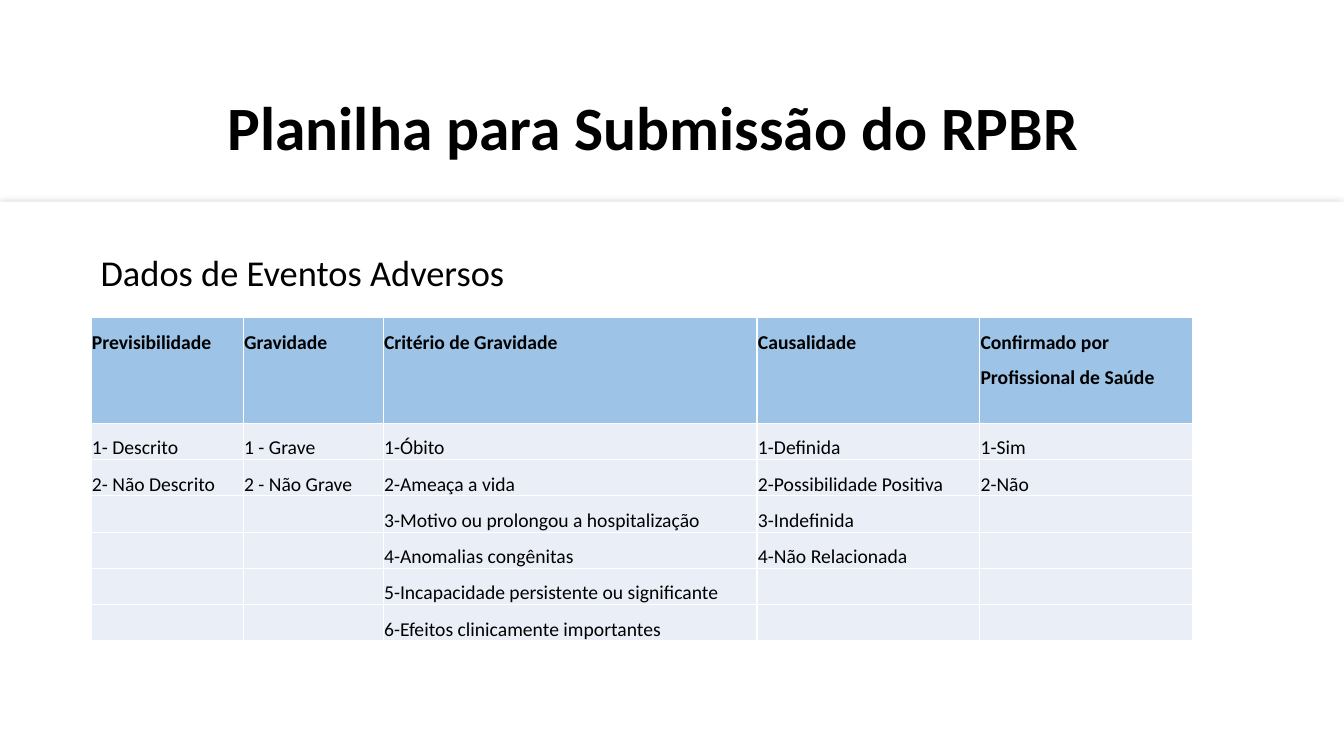
from lxml import etree
from pptx import Presentation
from pptx.dml.color import RGBColor
from pptx.enum.shapes import MSO_SHAPE
from pptx.enum.text import MSO_ANCHOR, PP_ALIGN
from pptx.oxml import parse_xml
from pptx.oxml.ns import nsdecls, qn
from pptx.util import Pt

RECTANGLE = MSO_SHAPE.RECTANGLE
TOP, MIDDLE, BOTTOM = MSO_ANCHOR.TOP, MSO_ANCHOR.MIDDLE, MSO_ANCHOR.BOTTOM
LEFT, JUSTIFY = PP_ALIGN.LEFT, PP_ALIGN.JUSTIFY

HEADINGS = ["Previsibilidade", "Gravidade", "Critério de Gravidade", "Causalidade",
            "Confirmado por Profissional de Saúde"]
OPTIONS = [
    ["1- Descrito", "1 - Grave", "1-Óbito", "1-Definida", "1-Sim"],
    ["2- Não Descrito", "2 - Não Grave", "2-Ameaça a vida", "2-Possibilidade Positiva", "2-Não"],
    ["", "", "3-Motivo ou prolongou a hospitalização", "3-Indefinida", ""],
    ["", "", "4-Anomalias congênitas", "4-Não Relacionada", ""],
    ["", "", "5-Incapacidade persistente ou significante", "", ""],
    ["", "", "6-Efeitos clinicamente importantes", "", ""],
]
COLUMN_WIDTHS = [108.7, 100, 267.1, 159, 151.8]
HEADER_HEIGHT, ROW_HEIGHT = 75.6, 25.7


def color(value):
    return RGBColor.from_string(value)


def apply(target, values):
    for name, value in values.items():
        setattr(target, name, value)


class SlideBuilder:
    font_name = "Calibri"
    black, white, shadow = "000000", "FFFFFF", "A6A6A6"
    header_fill, body_fill = "9DC3E6", "EAEFF7"

    def __init__(self, slide):
        self.slide = slide

    def add_text(self, frame, text, size, bold=False, spacing=1.5, align=LEFT):
        paragraph = frame.paragraphs[0]
        apply(paragraph, {"line_spacing": spacing, "alignment": align})
        run = paragraph.add_run()
        run.text = text
        apply(run.font, {"name": self.font_name, "size": Pt(size), "bold": bold})
        run.font.color.rgb = color(self.black)

    def panel(self, left, top, width, height):
        shape = self.slide.shapes.add_shape(RECTANGLE, Pt(left), Pt(top), Pt(width), Pt(height))
        shape.fill.solid()
        shape.fill.fore_color.rgb = color(self.white)
        shape.line.fill.background()
        shape.shadow.inherit = False
        # Soft shadow along the panel edge
        effects = shape.element.spPr.find(qn("a:effectLst"))
        outer = etree.SubElement(effects, qn("a:outerShdw"), blurRad=str(Pt(5)), dist="0",
                                 dir="0", algn="ctr", rotWithShape="0")
        tint = etree.SubElement(outer, qn("a:srgbClr"), val=self.shadow)
        etree.SubElement(tint, qn("a:alpha"), val="42000")

    def text_box(self, left, top, width, height, text, size, anchor=TOP, **style):
        box = self.slide.shapes.add_textbox(Pt(left), Pt(top), Pt(width), Pt(height))
        apply(box.text_frame, {"word_wrap": True, "vertical_anchor": anchor})
        self.add_text(box.text_frame, text, size, **style)

    def cell(self, cell, text, header):
        margin = Pt(0.7)
        apply(cell, {"margin_left": margin, "margin_right": margin, "margin_top": margin,
                     "margin_bottom": 0, "vertical_anchor": TOP if header else BOTTOM})
        properties = cell._tc.get_or_add_tcPr()
        for side in "LRTB":
            properties.append(parse_xml(
                f'<a:ln{side} {nsdecls("a")} w="{Pt(1)}"><a:solidFill>'
                f'<a:srgbClr val="{self.white}"/></a:solidFill></a:ln{side}>'))
        cell.fill.solid()
        cell.fill.fore_color.rgb = color(self.header_fill if header else self.body_fill)
        if text:
            self.add_text(cell.text_frame, text, 14, bold=header)

    def table(self, left, top, widths, heights, rows):
        table = self.slide.shapes.add_table(
            len(rows), len(widths), Pt(left), Pt(top), Pt(sum(widths)), Pt(sum(heights))).table
        for column, width in zip(table.columns, widths):
            column.width = Pt(width)
        for index, (row, height, texts) in enumerate(zip(table.rows, heights, rows)):
            row.height = Pt(height)
            for cell, text in zip(row.cells, texts):
                self.cell(cell, text, header=index == 0)


def main():
    presentation = Presentation()
    apply(presentation, {"slide_width": Pt(960), "slide_height": Pt(540)})
    builder = SlideBuilder(presentation.slides.add_slide(presentation.slide_layouts[6]))

    # Lower panel and headings
    builder.panel(0, 144, 960, 396)
    builder.text_box(155.5, 51.8, 859, 82.8, "Planilha para Submissão do RPBR", 44,
                     anchor=MIDDLE, bold=True, spacing=0.9)
    builder.text_box(64.8, 159.8, 866.9, 49.7, "Dados de Eventos Adversos", 26, align=JUSTIFY)

    # Adverse event codes
    heights = [HEADER_HEIGHT] + [ROW_HEIGHT] * len(OPTIONS)
    builder.table(65, 226.8, COLUMN_WIDTHS, heights, [HEADINGS] + OPTIONS)

    presentation.save("out.pptx")


if __name__ == "__main__":
    main()
